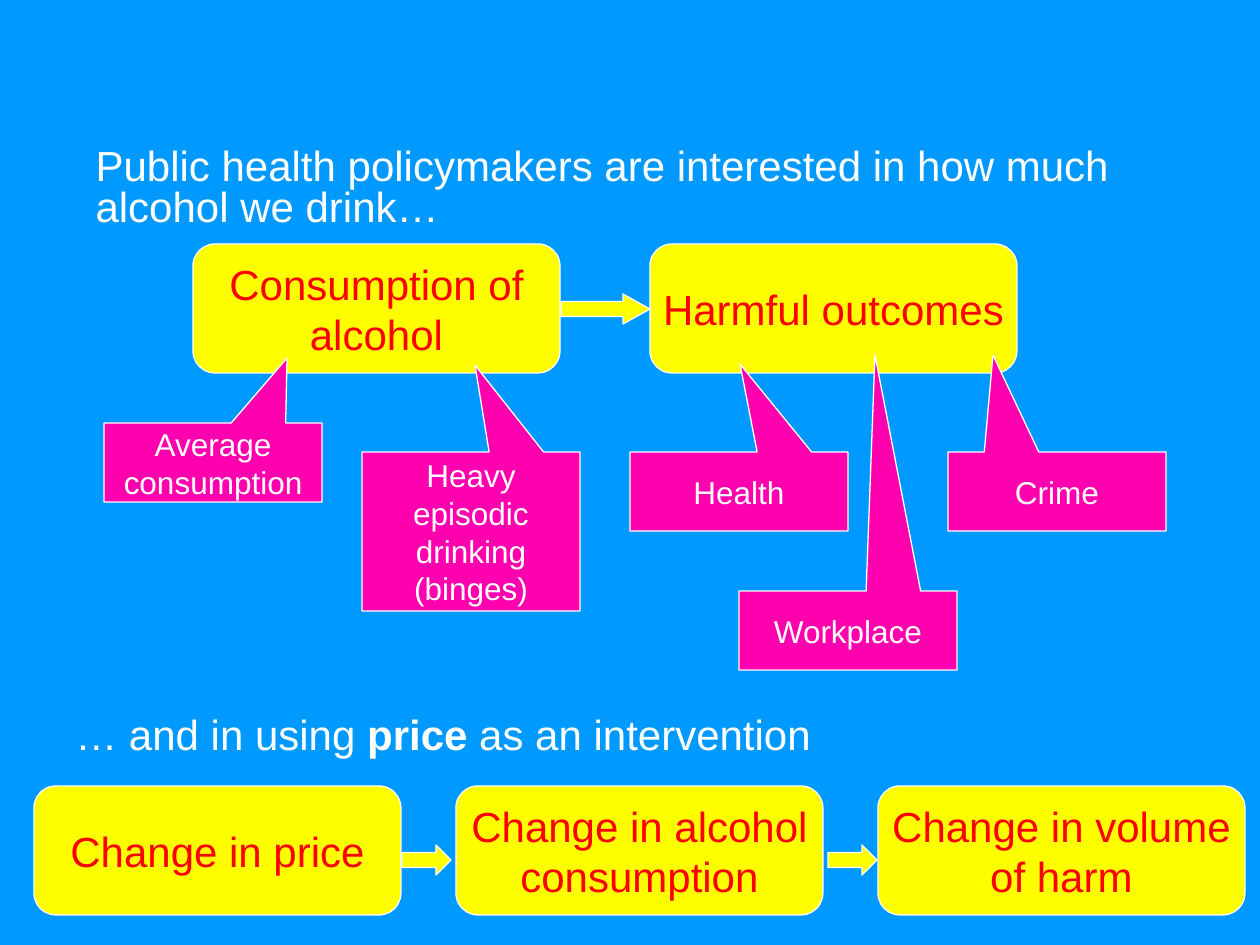
from pptx import Presentation
from pptx.dml.color import RGBColor
from pptx.enum.shapes import MSO_SHAPE
from pptx.enum.text import MSO_ANCHOR, PP_ALIGN
from pptx.util import Emu, Pt

PIXEL = 914400 / 126
COLORS = {
    "blue": "0099FF",
    "yellow": "FFFF00",
    "pink": "FF00AE",
    "red": "FF0000",
    "white": "FFFFFF",
}


def px(value):
    return Emu(round(value * PIXEL))


def color(name):
    return RGBColor.from_string(COLORS[name])


class SlideBuilder:
    font_name = "Arial"
    large, small = 24, 18
    box_width, box_height = 367, 129
    callout_width = 218
    arrow_height = 30

    def __init__(self, page):
        self.page = page
        page.background.fill.solid()
        page.background.fill.fore_color.rgb = color("blue")

    def fill_text(self, shape, spans, size, ink, paragraph_format, frame_format):
        frame = shape.text_frame
        para = frame.paragraphs[0]
        for target, values in (
            (frame, {"word_wrap": True, **frame_format}),
            (para, paragraph_format),
        ):
            for name, value in values.items():
                setattr(target, name, value)
        for text, bold in spans:
            span = para.add_run()
            span.text = text
            font_format = {"name": self.font_name, "size": Pt(size), "bold": bold}
            for name, value in font_format.items():
                setattr(span.font, name, value)
            span.font.color.rgb = color(ink)

    def statement(self, shape, left, top, spans, anchor):
        position = {
            "left": px(left), "top": px(top), "width": px(1134), "height": px(105),
        }
        for name, value in position.items():
            setattr(shape, name, value)
        self.fill_text(
            shape, spans, self.large, "white",
            {"alignment": PP_ALIGN.LEFT, "line_spacing": 0.83},
            {"vertical_anchor": anchor},
        )

    def title(self, left, top, text):
        self.statement(
            self.page.shapes.title, left, top, [(text, False)], MSO_ANCHOR.MIDDLE
        )

    def text(self, left, top, spans):
        box = self.page.shapes.add_textbox(0, 0, 0, 0)
        self.statement(box, left, top, spans, MSO_ANCHOR.TOP)

    def shape(self, kind, left, top, width, height, fill, adjustments):
        shape = self.page.shapes.add_shape(
            kind, px(left), px(top), px(width), px(height)
        )
        shape.shadow.inherit = False
        shape.fill.solid()
        shape.fill.fore_color.rgb = color(fill)
        shape.line.color.rgb = color("white")
        shape.line.width = Pt(0.75)
        for index, value in enumerate(adjustments):
            shape.adjustments[index] = value
        return shape

    def box(self, left, top, text):
        box = self.shape(
            MSO_SHAPE.ROUNDED_RECTANGLE, left, top,
            self.box_width, self.box_height, "yellow", [0.17],
        )
        self.fill_text(
            box, [(text, False)], self.large, "red",
            {"alignment": PP_ALIGN.CENTER},
            {
                "vertical_anchor": MSO_ANCHOR.MIDDLE,
                "margin_left": px(5), "margin_right": px(5),
                "margin_top": 0, "margin_bottom": 0,
            },
        )

    def arrow(self, left, top, width, head):
        self.shape(
            MSO_SHAPE.RIGHT_ARROW, left, top, width, self.arrow_height,
            "yellow", [0.5, head],
        )

    def callout(self, left, top, height, tip_x, tip_y, text):
        tip = [
            (tip_x - left) / self.callout_width - 0.5,
            (tip_y - top) / height - 0.5,
        ]
        callout = self.shape(
            MSO_SHAPE.RECTANGULAR_CALLOUT, left, top,
            self.callout_width, height, "pink", tip,
        )
        self.fill_text(
            callout, [(text, False)], self.small, "white",
            {"alignment": PP_ALIGN.CENTER}, {"vertical_anchor": MSO_ANCHOR.MIDDLE},
        )


def main():
    deck = Presentation()
    deck.slide_width, deck.slide_height = px(1260), px(945)
    builder = SlideBuilder(deck.slides.add_slide(deck.slide_layouts[5]))

    builder.title(
        83, 137,
        "Public health policymakers are interested in how much alcohol we drink…",
    )
    for left, text in ((193, "Consumption of alcohol"), (650, "Harmful outcomes")):
        builder.box(left, 244, text)
    builder.arrow(561, 294, 89, 0.9)

    for callout in (
        (104, 423, 79, 287, 358, "Average consumption"),
        (362, 452, 159, 475, 365, "Heavy episodic drinking (binges)"),
        (630, 452, 79, 740, 364, "Health"),
        (739, 591, 79, 875, 355, "Workplace"),
        (948, 452, 79, 993, 355, "Crime"),
    ):
        builder.callout(*callout)

    builder.text(
        63, 711,
        [("… and in using ", False), ("price", True), (" as an intervention", False)],
    )
    steps = (
        "Change in price", "Change in alcohol consumption", "Change in volume of harm",
    )
    for index, text in enumerate(steps):
        builder.box(34 + 422 * index, 786, text)
    for left in (402, 828):
        builder.arrow(left, 845, 49, 0.5)

    deck.save("out.pptx")


if __name__ == "__main__":
    main()
